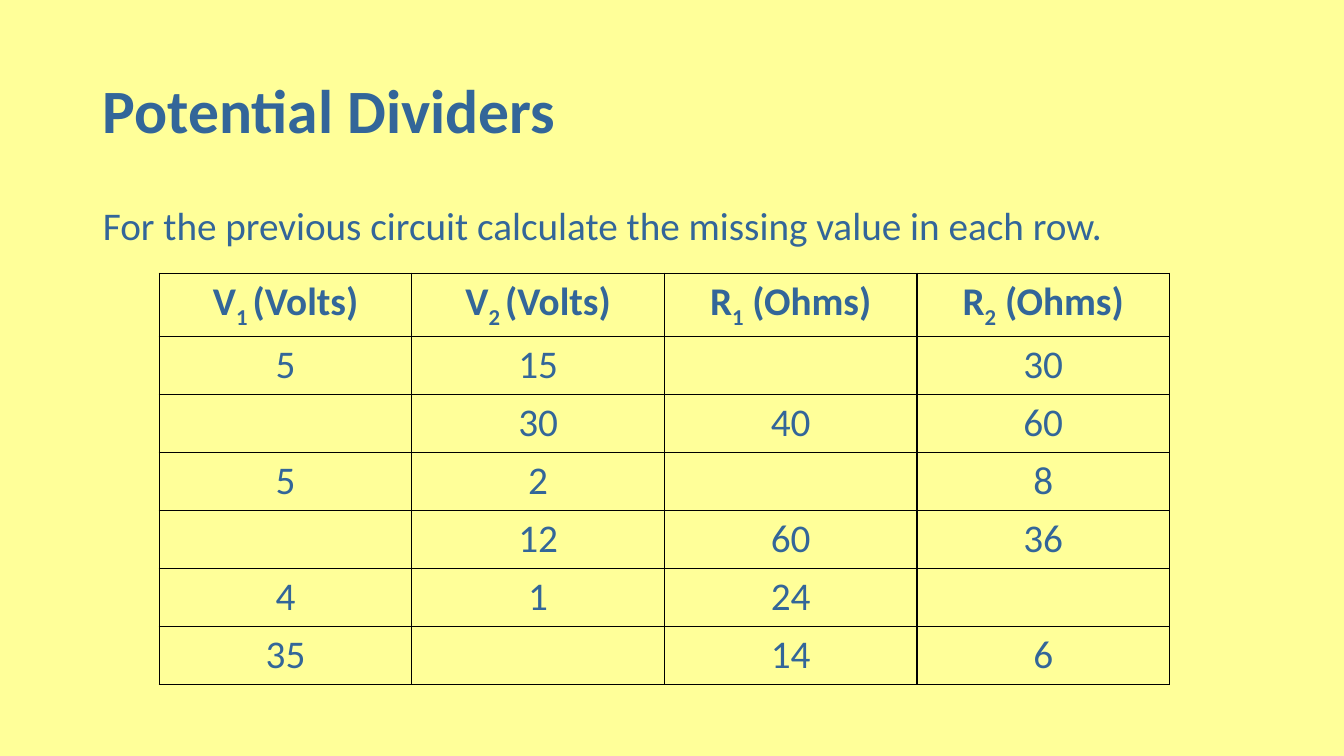
from lxml.etree import SubElement
from pptx import Presentation
from pptx.dml.color import RGBColor
from pptx.enum.text import MSO_ANCHOR, MSO_AUTO_SIZE, PP_ALIGN
from pptx.oxml import parse_xml
from pptx.oxml.ns import nsdecls, qn
from pptx.util import Inches, Pt

COLORS = {"back": "FFFF99", "text": "336699", "line": "000000"}
FONT = "Calibri"
HEADS = [
    ("V", "1 ", "(Volts)"),
    ("V", "2 ", "(Volts)"),
    ("R", "1", " (Ohms)"),
    ("R", "2", " (Ohms)"),
]
VALUES = [
    ("5", "15", "", "30"),
    ("", "30", "40", "60"),
    ("5", "2", "", "8"),
    ("", "12", "60", "36"),
    ("4", "1", "24", ""),
    ("35", "", "14", "6"),
]


def add_run(para, text, size=28, bold=False, base=0):
    run = para.add_run()
    run.text = text
    font = run.font
    font.name, font.size, font.bold = FONT, Pt(size), bold
    font.color.rgb = RGBColor.from_string(COLORS["text"])
    if base:
        run._r.get_or_add_rPr().set("baseline", str(base * 1000))


def fill_holder(shape, box, text, anchor, **style):
    shape.left, shape.top, shape.width, shape.height = map(Inches, box)
    frame = shape.text_frame
    frame.word_wrap = True
    frame.auto_size = MSO_AUTO_SIZE.NONE
    frame.vertical_anchor = anchor
    para = frame.paragraphs[0]
    para.alignment = PP_ALIGN.LEFT
    para.line_spacing = 0.9
    add_run(para, text, **style)
    return para


def clear_bullet(para):
    props = para._p.get_or_add_pPr()
    props.set("marL", "0")
    props.set("indent", "0")
    SubElement(props, qn("a:buNone"))


def add_edges(cell):
    props = cell._tc.get_or_add_tcPr()
    for spot, side in enumerate("LRTB"):
        props.insert(spot, parse_xml(
            f'<a:ln{side} {nsdecls("a")} w="{Pt(1)}"><a:solidFill>'
            f'<a:srgbClr val="{COLORS["line"]}"/></a:solidFill></a:ln{side}>'))


def fill_cell(cell, parts, bold):
    cell.fill.background()
    add_edges(cell)
    para = cell.text_frame.paragraphs[0]
    para.alignment = PP_ALIGN.CENTER
    for part, base in zip(parts, (0, -25, 0)):
        if part:
            add_run(para, part, bold=bold, base=base)


def add_grid(slide):
    rows = [HEADS] + [[(value,) for value in row] for row in VALUES]
    box = map(Inches, (1.58, 2.71, 10.02, 3.92))
    table = slide.shapes.add_table(len(rows), len(HEADS), *box).table
    table.first_row = table.horz_banding = False
    for r, row in enumerate(rows):
        for c, parts in enumerate(row):
            fill_cell(table.cell(r, c), parts, bold=r == 0)


def main():
    """Build the potential dividers exercise slide."""
    deck = Presentation()
    deck.slide_width, deck.slide_height = Inches(13.33), Inches(7.5)
    slide = deck.slides.add_slide(deck.slide_layouts[1])
    back = slide.background.fill
    back.solid()
    back.fore_color.rgb = RGBColor.from_string(COLORS["back"])
    title, body = slide.placeholders
    fill_holder(title, (0.92, 0.4, 11.5, 1.45), "Potential Dividers",
                MSO_ANCHOR.MIDDLE, size=44, bold=True)
    para = fill_holder(
        body, (0.92, 2, 11.5, 4.76),
        "For the previous circuit calculate the missing value in each row.",
        MSO_ANCHOR.TOP)
    para.space_before = Pt(10)
    clear_bullet(para)
    add_grid(slide)
    deck.save("out.pptx")


if __name__ == "__main__":
    main()
